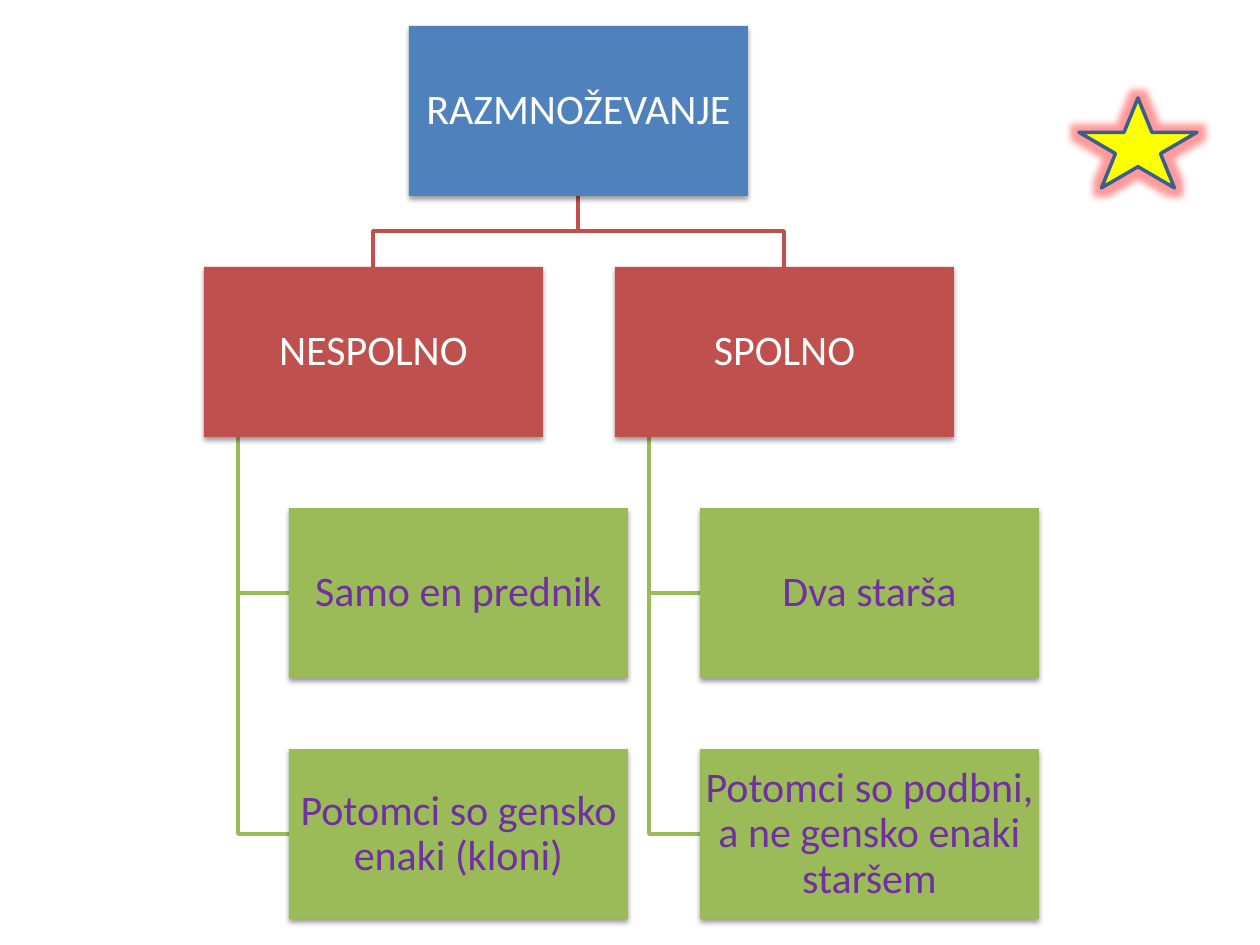
from typing import NamedTuple

from lxml import etree
from pptx import Presentation
from pptx.dml.color import RGBColor
from pptx.enum.shapes import MSO_SHAPE
from pptx.enum.text import MSO_ANCHOR, PP_ALIGN
from pptx.oxml.ns import qn
from pptx.util import Emu, Pt

RECT, STAR = MSO_SHAPE.RECTANGLE, MSO_SHAPE.STAR_5_POINT
MIDDLE, CENTER = MSO_ANCHOR.MIDDLE, PP_ALIGN.CENTER

PX = 914400 / 126
BOX_W, BOX_H = 339, 170
TOP, ROW_STEP = 26, 241
ROOT_LEFT = 409
LEAF_INDENT, TRUNK_INDENT = 85, 34
BLUE, RED, GREEN = "4F81BD", "C0504D", "9BBB59"
WHITE, PURPLE = "FFFFFF", "7030A0"


class Box(NamedTuple):
    text: str
    left: int
    row: int
    fill: str
    color: str = WHITE

    @property
    def top(self) -> int:
        return TOP + self.row * ROW_STEP

    @property
    def bottom(self) -> int:
        return self.top + BOX_H

    @property
    def center_x(self) -> int:
        return self.left + BOX_W // 2

    @property
    def center_y(self) -> int:
        return self.top + BOX_H // 2


class Branch(NamedTuple):
    title: str
    left: int
    leaves: tuple[str, ...]


BRANCHES = (
    Branch("NESPOLNO", 204, ("Samo en prednik", "Potomci so gensko enaki (kloni)")),
    Branch("SPOLNO", 615, ("Dva starša", "Potomci so podbni, a ne gensko enaki staršem")),
)


def px(n: int) -> Emu:
    return Emu(round(n * PX))


def rgb(value: str) -> RGBColor:
    return RGBColor.from_string(value)


def add_effect(sp, name: str, color: str, alpha: int, **attrs) -> None:
    """Put one outer effect on a shape; alpha is in percent."""
    sp.shadow.inherit = False
    effects = sp._element.spPr.find(qn("a:effectLst"))
    effect = etree.SubElement(effects, qn(f"a:{name}"),
                              {k: str(v) for k, v in attrs.items()})
    clr = etree.SubElement(effect, qn("a:srgbClr"), val=color)
    etree.SubElement(clr, qn("a:alpha"), val=str(alpha * 1000))


def draw_box(shapes, box: Box) -> None:
    sp = shapes.add_shape(RECT, px(box.left), px(box.top), px(BOX_W), px(BOX_H))
    sp.fill.solid()
    sp.fill.fore_color.rgb = rgb(box.fill)
    sp.line.fill.background()
    add_effect(sp, "outerShdw", "000000", 38, blurRad=Pt(3.1), dist=Pt(1.6),
               dir=5400000, rotWithShape=0)
    tf = sp.text_frame
    tf.word_wrap = True
    tf.vertical_anchor = MIDDLE
    tf.margin_left = tf.margin_right = tf.margin_top = tf.margin_bottom = px(2)
    p = tf.paragraphs[0]
    p.text = box.text
    p.alignment = CENTER
    p.line_spacing = 0.9
    p.font.name = "Calibri"
    p.font.size = Pt(24)
    p.font.color.rgb = rgb(box.color)


def draw_path(shapes, points: list[tuple[int, int]], color: str) -> None:
    builder = shapes.build_freeform(*points[0], scale=PX)
    builder.add_line_segments(points[1:], close=False)
    sp = builder.convert_to_shape()
    sp.shadow.inherit = False
    sp.fill.background()
    sp.line.color.rgb = rgb(color)
    sp.line.width = Pt(2)


def link_below(shapes, parent: Box, child: Box) -> None:
    mid_y = (parent.bottom + child.top) // 2
    draw_path(shapes, [(parent.center_x, parent.bottom), (parent.center_x, mid_y),
                       (child.center_x, mid_y), (child.center_x, child.top)], RED)


def link_beside(shapes, parent: Box, leaf: Box) -> None:
    trunk_x = parent.left + TRUNK_INDENT
    draw_path(shapes, [(trunk_x, parent.bottom), (trunk_x, leaf.center_y),
                       (leaf.left, leaf.center_y)], GREEN)


def draw_star(shapes) -> None:
    sp = shapes.add_shape(STAR, px(1079), px(98), px(118), px(90))
    sp.fill.solid()
    sp.fill.fore_color.rgb = rgb("FFFF00")
    sp.line.color.rgb = rgb("3A5F8C")
    sp.line.width = Pt(2)
    add_effect(sp, "glow", "FF0000", 40, rad=Pt(8))


def main() -> None:
    prs = Presentation()
    prs.slide_width, prs.slide_height = px(1260), px(945)
    shapes = prs.slides.add_slide(prs.slide_layouts[6]).shapes

    root = Box("RAZMNOŽEVANJE", ROOT_LEFT, 0, BLUE)
    boxes = [root]
    for branch in BRANCHES:
        parent = Box(branch.title, branch.left, 1, RED)
        link_below(shapes, root, parent)
        boxes.append(parent)
        for row, text in enumerate(branch.leaves, start=2):
            leaf = Box(text, branch.left + LEAF_INDENT, row, GREEN, PURPLE)
            link_beside(shapes, parent, leaf)
            boxes.append(leaf)
    for box in boxes:
        draw_box(shapes, box)
    draw_star(shapes)
    prs.save("out.pptx")


if __name__ == "__main__":
    main()
